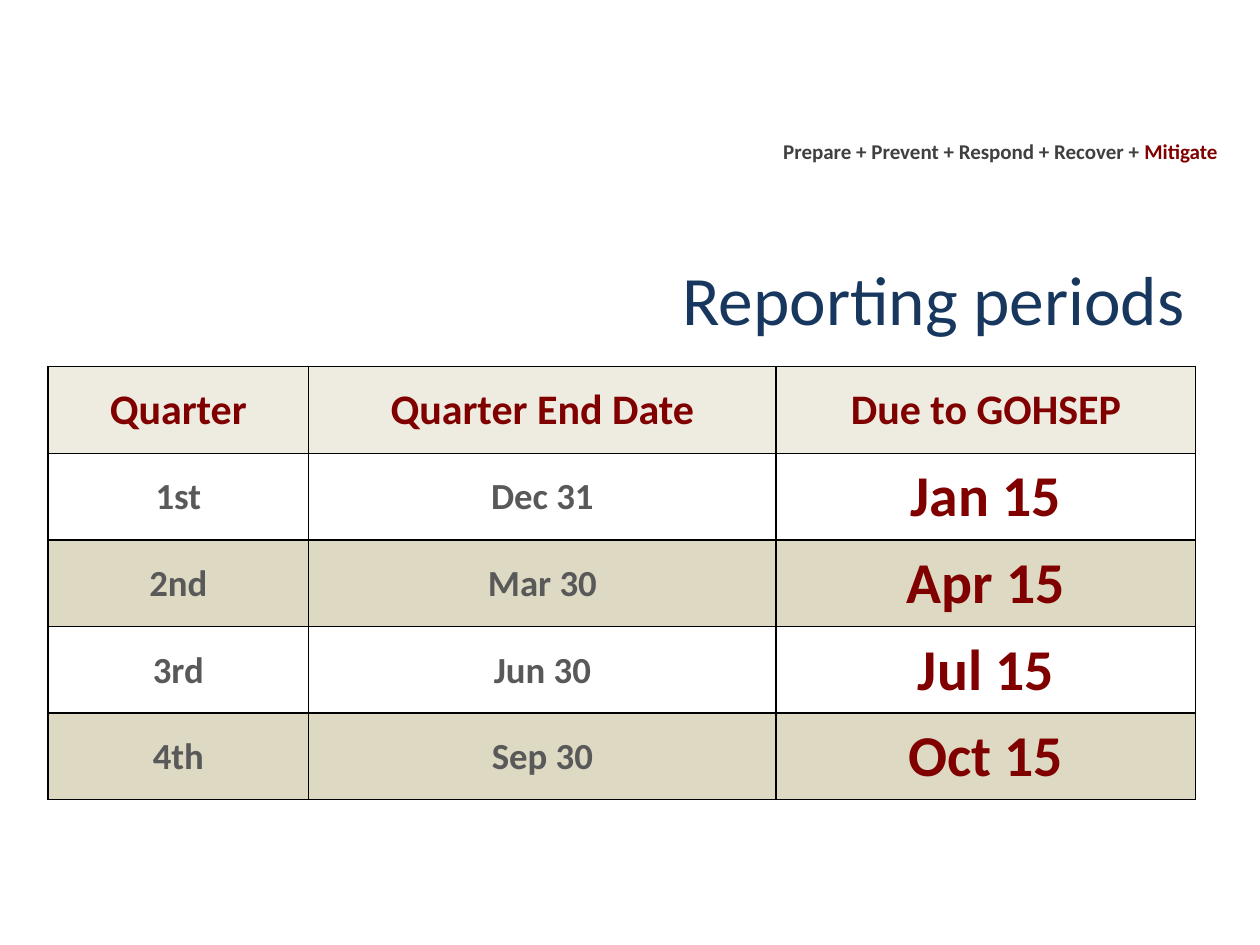
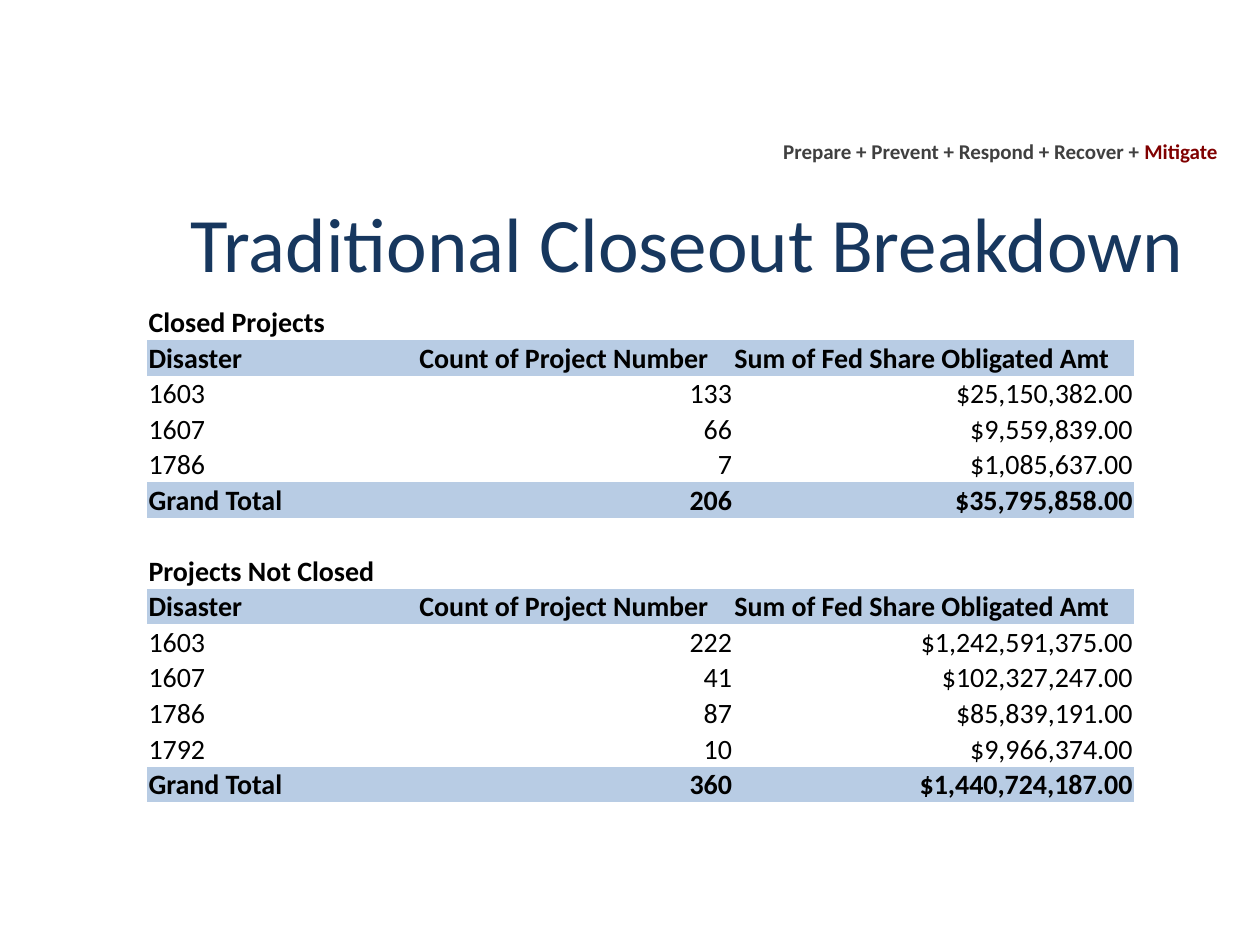
import pptx
import pptx.util
import pptx.dml.color
import pptx.enum.text
import pptx.oxml.ns
from dataclasses import dataclass
from lxml import etree

Pt = pptx.util.Pt
ALIGN = pptx.enum.text.PP_ALIGN
ANCHOR = pptx.enum.text.MSO_ANCHOR
qn = pptx.oxml.ns.qn

# Shared look
FONT = "Calibri"
NAVY, MAROON, BLACK, WHITE = "17375E", "800000", "000000", "FFFFFF"
DARK_GREY, GREY = "404040", "595959"
CREAM, TAN, PALE_BLUE = "EEECE1", "DDD9C3", "B8CCE4"
NO_TABLE_STYLE = "{2D5ABB26-0587-4C30-8999-92F81FD0307C}"


@dataclass
class Box:
    left: float
    top: float
    width: float
    height: float


@dataclass
class Run:
    text: str
    size: float
    color: str
    bold: bool = False


@dataclass
class Cell:
    run: Run
    align: ALIGN = ALIGN.LEFT
    fill: str | None = None


@dataclass
class Grid:
    left: float
    top: float
    widths: list[float]
    row_height: float
    anchor: ANCHOR
    rows: list[list[Cell]]
    border: str | None = None


def rgb(color: str) -> pptx.dml.color.RGBColor:
    return pptx.dml.color.RGBColor.from_string(color)


def add_run(p, run: Run) -> None:
    r = p.add_run()
    r.text = run.text
    r.font.name = FONT
    r.font.size = Pt(run.size)
    r.font.bold = run.bold
    r.font.color.rgb = rgb(run.color)


def add_text(slide, box: Box, runs: list[Run]) -> None:
    """Right-aligned text, centred vertically in its box."""
    sp = slide.shapes.add_textbox(Pt(box.left), Pt(box.top), Pt(box.width), Pt(box.height))
    tf = sp.text_frame
    tf.word_wrap = True
    tf.vertical_anchor = ANCHOR.MIDDLE
    p = tf.paragraphs[0]
    p.alignment = ALIGN.RIGHT
    for run in runs:
        add_run(p, run)


def add_borders(cell, color: str) -> None:
    tc_pr = cell._tc.get_or_add_tcPr()
    for side in ("a:lnL", "a:lnR", "a:lnT", "a:lnB"):
        ln = etree.SubElement(tc_pr, qn(side), w=str(Pt(1)))
        fill = etree.SubElement(ln, qn("a:solidFill"))
        etree.SubElement(fill, qn("a:srgbClr"), val=color)


def fill_cell(cell, content: Cell, grid: Grid) -> None:
    cell.margin_left = cell.margin_right = cell.margin_top = Pt(0.72)
    cell.margin_bottom = Pt(0)
    cell.vertical_anchor = grid.anchor
    if grid.border:
        add_borders(cell, grid.border)
    if content.fill:
        cell.fill.solid()
        cell.fill.fore_color.rgb = rgb(content.fill)
    else:
        cell.fill.background()
    p = cell.text_frame.paragraphs[0]
    p.alignment = content.align
    if content.run.text:
        add_run(p, content.run)
    else:  # keeps empty rows as low as the others
        etree.SubElement(p._p, qn("a:endParaRPr"), sz=str(round(content.run.size * 100)))


def add_grid(slide, grid: Grid) -> None:
    frame = slide.shapes.add_table(
        len(grid.rows), len(grid.widths), Pt(grid.left), Pt(grid.top),
        Pt(sum(grid.widths)), Pt(grid.row_height * len(grid.rows)))
    table = frame.table
    table.first_row = table.horz_banding = False
    table._tbl.tblPr.find(qn("a:tableStyleId")).text = NO_TABLE_STYLE
    for column, width in zip(table.columns, grid.widths):
        column.width = Pt(width)
    for i, row in enumerate(grid.rows):
        table.rows[i].height = Pt(grid.row_height)
        for j, content in enumerate(row):
            fill_cell(table.cell(i, j), content, grid)


def add_slide(prs, title: str, box: Box, size: float):
    """Blank slide with the shared tagline and a title."""
    slide = prs.slides.add_slide(prs.slide_layouts[6])
    add_text(slide, Box(314, 75.6, 388.8, 21.6), [
        Run("Prepare + Prevent + Respond + Recover + ", 12, DARK_GREY, True),
        Run("Mitigate", 12, MAROON, True)])
    add_text(slide, box, [Run(title, size, NAVY)])
    return slide


# Reporting periods: due dates stand out
def period_row(texts: list[str], sizes: list[float], colors: list[str], fill: str) -> list[Cell]:
    return [Cell(Run(text, size, color, True), ALIGN.CENTER, fill)
            for text, size, color in zip(texts, sizes, colors)]


def period_rows() -> list[list[Cell]]:
    rows = [period_row(["Quarter", "Quarter End Date", "Due to GOHSEP"],
                       [24] * 3, [MAROON] * 3, CREAM)]
    quarters = [["1st", "Dec 31", "Jan 15"], ["2nd", "Mar 30", "Apr 15"],
                ["3rd", "Jun 30", "Jul 15"], ["4th", "Sep 30", "Oct 15"]]
    for i, quarter in enumerate(quarters):
        rows.append(period_row(quarter, [21, 21, 33], [GREY, GREY, MAROON],
                               TAN if i % 2 else WHITE))
    return rows


# Closeout: each section has a heading, a header, disasters and a total
def closeout_row(texts: list[str], bold: bool = False, fill: str | None = None,
                 numeric: bool = True) -> list[Cell]:
    return [Cell(Run(text, 16, BLACK, bold),
                 ALIGN.RIGHT if numeric and j else ALIGN.LEFT, fill)
            for j, text in enumerate(texts)]


def closeout_section(heading: str, disasters: list[list[str]], total: list[str]) -> list[list[Cell]]:
    header = ["Disaster", "Count of Project Number", "Sum of Fed Share Obligated Amt"]
    return [closeout_row([heading, "", ""], True),
            closeout_row(header, True, PALE_BLUE, numeric=False),
            *[closeout_row(disaster) for disaster in disasters],
            closeout_row(["Grand Total", *total], True, PALE_BLUE)]


def closeout_rows() -> list[list[Cell]]:
    closed = closeout_section("Closed Projects", [
        ["1603", "133", "$25,150,382.00"],
        ["1607", "66", "$9,559,839.00"],
        ["1786", "7", "$1,085,637.00"]], ["206", "$35,795,858.00"])
    not_closed = closeout_section("Projects Not Closed", [
        ["1603", "222", "$1,242,591,375.00"],
        ["1607", "41", "$102,327,247.00"],
        ["1786", "87", "$85,839,191.00"],
        ["1792", "10", "$9,966,374.00"]], ["360", "$1,440,724,187.00"])
    return closed + [closeout_row([""] * 3)] + not_closed


def main() -> None:
    prs = pptx.Presentation()
    prs.slide_width, prs.slide_height = Pt(720), Pt(540)

    slide = add_slide(prs, "Reporting periods", Box(36, 143.3, 648, 53.3), 39.6)
    add_grid(slide, Grid(27.4, 209.5, [149, 267.1, 239.8], 49.5,
                         ANCHOR.MIDDLE, period_rows(), BLACK))

    slide = add_slide(prs, "Traditional Closeout Breakdown", Box(36, 102.2, 648, 71.3), 44)
    add_grid(slide, Grid(84.2, 174.2, [154.8, 180, 229], 20.3,
                         ANCHOR.BOTTOM, closeout_rows()))

    prs.save("out.pptx")


if __name__ == "__main__":
    main()
